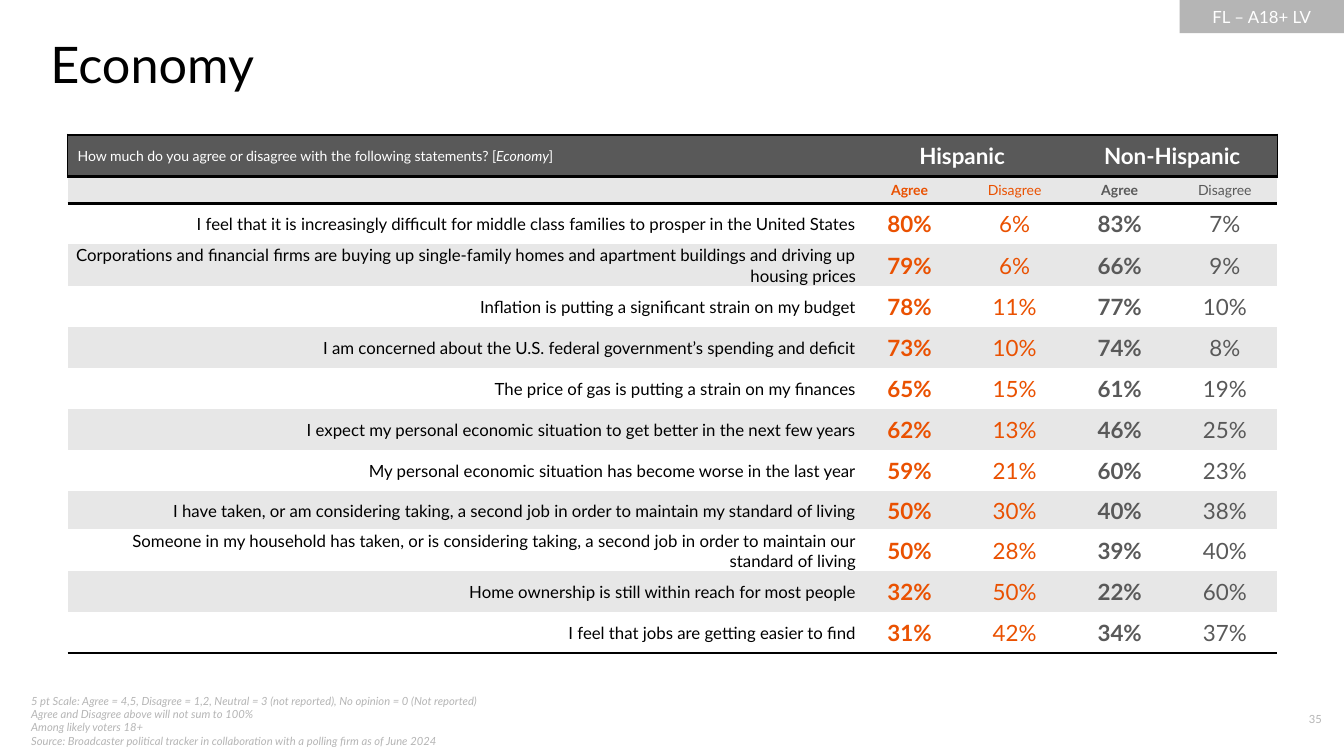
from dataclasses import dataclass

from lxml import etree
from pptx import Presentation
from pptx.dml.color import RGBColor
from pptx.enum.shapes import MSO_SHAPE
from pptx.enum.text import MSO_ANCHOR, MSO_AUTO_SIZE, PP_ALIGN
from pptx.oxml.ns import qn
from pptx.util import Inches, Pt

LEFT, CENTER, RIGHT = PP_ALIGN.LEFT, PP_ALIGN.CENTER, PP_ALIGN.RIGHT
TOP, MIDDLE = MSO_ANCHOR.TOP, MSO_ANCHOR.MIDDLE
RECTANGLE = MSO_SHAPE.RECTANGLE
FIXED_SIZE = MSO_AUTO_SIZE.NONE
SLIDE_WIDTH, SLIDE_HEIGHT = 13.33, 7.5
PLAIN_TABLE_STYLE = "{2D5ABB26-0587-4C30-8999-92F81FD0307C}"


@dataclass(frozen=True)
class Theme:
    font: str = "Lato"
    black: str = "000000"
    white: str = "FFFFFF"
    dark: str = "595959"
    muted: str = "B5B5B5"
    band: str = "E7E7E7"
    accent: str = "EA5101"
    title_size: int = 36
    value_size: int = 16
    body_size: int = 12
    label_size: int = 10
    note_size: int = 8
    rule: float = 2.25
    side_rule: float = 1


THEME = Theme()

QUESTION = "How much do you agree or disagree with the following statements? [*Economy*]"
GROUPS = [("Hispanic", THEME.accent), ("Non-Hispanic", THEME.dark)]
ANSWERS = ["Agree", "Disagree"]
STATEMENTS = [
    ("I feel that it is increasingly difficult for middle class families to prosper in the United States",
     80, 6, 83, 7),
    ("Corporations and financial firms are buying up single-family homes and apartment buildings "
     "and driving up housing prices", 79, 6, 66, 9),
    ("Inflation is putting a significant strain on my budget", 78, 11, 77, 10),
    ("I am concerned about the U.S. federal government’s spending and deficit", 73, 10, 74, 8),
    ("The price of gas is putting a strain on my finances", 65, 15, 61, 19),
    ("I expect my personal economic situation to get better in the next few years", 62, 13, 46, 25),
    ("My personal economic situation has become worse in the last year", 59, 21, 60, 23),
    ("I have taken, or am considering taking, a second job in order to maintain my standard of living",
     50, 30, 40, 38),
    ("Someone in my household has taken, or is considering taking, a second job in order to maintain "
     "our standard of living", 50, 28, 39, 40),
    ("Home ownership is still within reach for most people", 32, 50, 22, 60),
    ("I feel that jobs are getting easier to find", 31, 42, 34, 37),
]
FOOTNOTE = (
    "5 pt Scale: Agree = 4,5, Disagree = 1,2, Neutral = 3 (not reported), No opinion = 0 (Not reported)\n"
    "Agree and Disagree above will not sum to 100%\n"
    "Among likely voters 18+\v"
    "Source: Broadcaster political tracker in collaboration with a polling firm as of June 2024"
)


def write(frame, text, size, color, bold=False, italic=False, align=LEFT):
    """Newline starts a paragraph, \\v breaks a line, *stars* mark italics."""
    for number, line in enumerate(text.split("\n")):
        paragraph = frame.add_paragraph() if number else frame.paragraphs[0]
        paragraph.alignment = align
        for part_number, part in enumerate(line.split("\v")):
            if part_number:
                paragraph.add_line_break()
            for piece_number, piece in enumerate(part.split("*")):
                if not piece:
                    continue
                run = paragraph.add_run()
                run.text = piece
                font = run.font
                font.name, font.size, font.bold = THEME.font, Pt(size), bold
                font.italic = italic or piece_number % 2 == 1
                font.color.rgb = RGBColor.from_string(color)


def add_text(slide, box, text, anchor=TOP, **text_format):
    frame = slide.shapes.add_textbox(*map(Inches, box)).text_frame
    frame.word_wrap = True
    frame.vertical_anchor = anchor
    write(frame, text, **text_format)


def add_title(slide, box, text):
    title = slide.shapes.title
    title.left, title.top, title.width, title.height = map(Inches, box)
    frame = title.text_frame
    frame.margin_left = frame.margin_top = frame.margin_right = frame.margin_bottom = 0
    frame.vertical_anchor = TOP
    frame.auto_size = FIXED_SIZE
    write(frame, text, size=THEME.title_size, color=THEME.black)


def add_audience_tag(slide, box, text):
    tag = slide.shapes.add_shape(RECTANGLE, *map(Inches, box))
    tag.shadow.inherit = False
    tag.fill.solid()
    tag.fill.fore_color.rgb = RGBColor.from_string(THEME.muted)
    tag.line.fill.background()
    tag.text_frame.vertical_anchor = MIDDLE
    write(tag.text_frame, text, size=THEME.body_size, color=THEME.white, align=CENTER)


def fill_cell(cell, fill, text="", tight=False, **text_format):
    cell.fill.solid()
    cell.fill.fore_color.rgb = RGBColor.from_string(fill)
    cell.vertical_anchor = MIDDLE
    if tight:
        cell.margin_left = cell.margin_top = cell.margin_right = Inches(0.01)
        cell.margin_bottom = 0
    if text:
        write(cell.text_frame, text, **text_format)
    else:
        # Keeps an empty cell from stretching its row
        end = etree.SubElement(cell.text_frame.paragraphs[0]._p, qn("a:endParaRPr"))
        end.set("sz", str(THEME.label_size * 100))


def add_borders(cell, **widths):
    """Sides are given in schema order: L, R, T, B."""
    properties = cell._tc.get_or_add_tcPr()
    for position, (side, width) in enumerate(widths.items()):
        line = etree.Element(qn(f"a:ln{side}"), w=str(Pt(width)))
        fill = etree.SubElement(line, qn("a:solidFill"))
        etree.SubElement(fill, qn("a:srgbClr"), val=THEME.black)
        properties.insert(position, line)


def add_agreement_table(slide, box):
    left, top, width, height = box
    row_count, column_count = len(STATEMENTS) + 2, 1 + len(GROUPS) * len(ANSWERS)
    table = slide.shapes.add_table(row_count, column_count, *map(Inches, box)).table
    table.first_row = table.horz_banding = False
    table._tbl.tblPr.find(qn("a:tableStyleId")).text = PLAIN_TABLE_STYLE

    # Grid: a wide statement column, equal value columns and two shorter rows
    statement_width, short_rows = 7.83, {1: 0.25, 9: 0.38}
    value_width = (width - statement_width) / (column_count - 1)
    row_height = (height - sum(short_rows.values())) / (row_count - len(short_rows))
    for index, column in enumerate(table.columns):
        column.width = Inches(value_width if index else statement_width)
    for index, row in enumerate(table.rows):
        row.height = Inches(short_rows.get(index, row_height))

    # Group headings and answer labels
    fill_cell(table.cell(0, 0), THEME.dark, QUESTION, size=THEME.label_size, color=THEME.white)
    fill_cell(table.cell(1, 0), THEME.band)
    value_formats = []
    for group_number, (group, color) in enumerate(GROUPS):
        first = 1 + group_number * len(ANSWERS)
        last = first + len(ANSWERS) - 1
        table.cell(0, first).merge(table.cell(0, last))
        fill_cell(table.cell(0, first), THEME.dark, group, size=THEME.value_size,
                  color=THEME.white, bold=True, align=CENTER)
        fill_cell(table.cell(0, last), THEME.dark)
        for offset, answer in enumerate(ANSWERS):
            value_format = dict(color=color, bold=offset == 0, align=CENTER)
            value_formats.append(value_format)
            fill_cell(table.cell(1, first + offset), THEME.band, answer,
                      size=THEME.label_size, **value_format)

    # Banded statement rows
    for row, (statement, *values) in enumerate(STATEMENTS, start=2):
        fill = THEME.band if row % 2 else THEME.white
        fill_cell(table.cell(row, 0), fill, statement, tight=True,
                  size=THEME.body_size, color=THEME.black, align=RIGHT)
        for column, (value, value_format) in enumerate(zip(values, value_formats), start=1):
            fill_cell(table.cell(row, column), fill, f"{value}%", tight=True,
                      size=THEME.value_size, **value_format)

    # Rules around the heading and below the last row
    for column in range(column_count):
        sides = {}
        if column == 0:
            sides["L"] = THEME.side_rule
        if column >= column_count - len(ANSWERS):
            sides["R"] = THEME.side_rule if column in (column_count - 1, column_count - 2) else 0
        add_borders(table.cell(0, column), **sides, T=THEME.rule, B=THEME.rule)
        add_borders(table.cell(1, column), T=THEME.rule)
        add_borders(table.cell(row_count - 1, column), B=THEME.rule)


def add_footer(slide, box):
    left, top, width, height = box
    note = dict(size=THEME.note_size, color=THEME.muted)
    add_text(slide, (left, top, 5.11, height), FOOTNOTE, anchor=MIDDLE, italic=True, **note)
    add_text(slide, (left + width - 0.88, top + 0.07, 0.88, 0.27), "35", align=RIGHT, **note)


def main():
    presentation = Presentation()
    presentation.slide_width, presentation.slide_height = Inches(SLIDE_WIDTH), Inches(SLIDE_HEIGHT)
    slide = presentation.slides.add_slide(presentation.slide_layouts[5])
    add_footer(slide, (0.21, 6.95, 13, 0.4))
    add_audience_tag(slide, (SLIDE_WIDTH - 1.63, 0, 1.63, 0.33), "FL – A18+ LV")
    add_title(slide, (0.5, 0.33, 12, 0.61), "Economy")
    add_agreement_table(slide, (0.67, 1.34, 12, 5.12))
    presentation.save("out.pptx")


if __name__ == "__main__":
    main()
